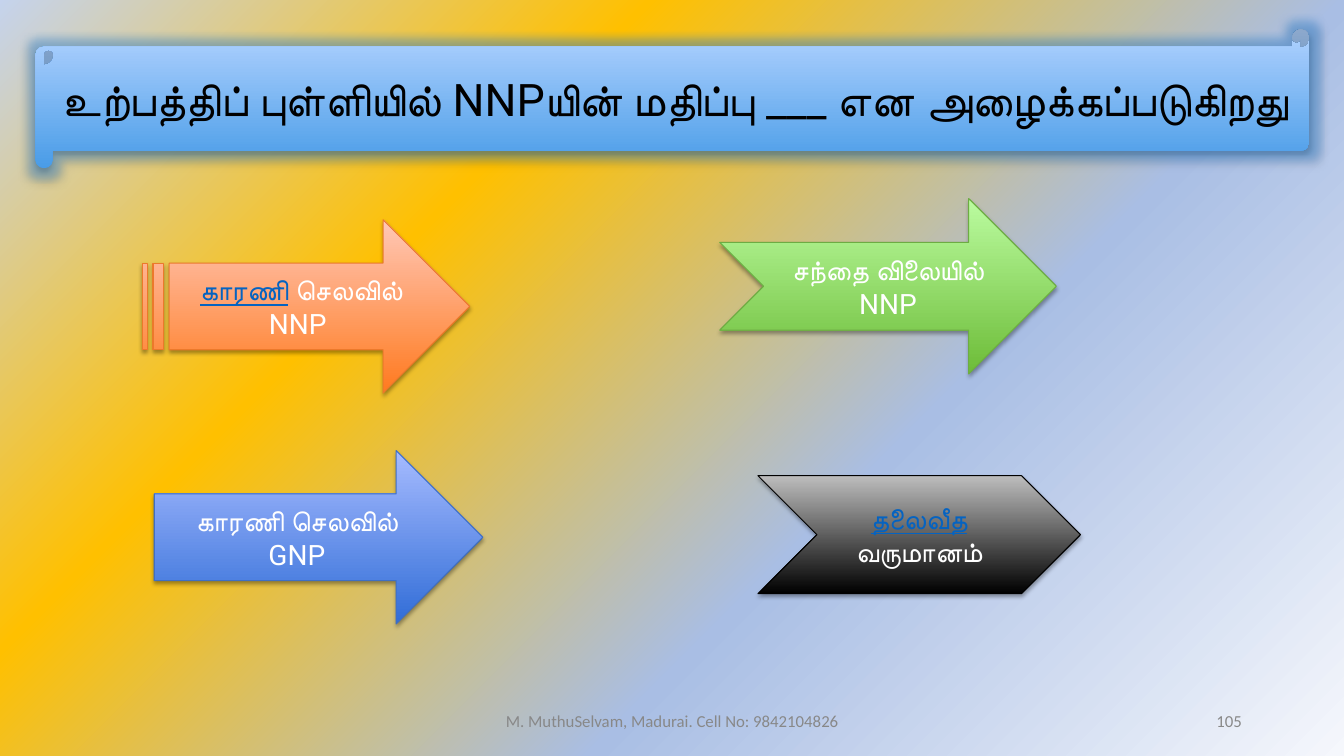
from dataclasses import dataclass

from lxml import etree
from pptx import Presentation, util as u
from pptx.dml.color import RGBColor
from pptx.enum import shapes, text
from pptx.oxml import ns, parse_xml

SHAPE, ALIGN = shapes.MSO_SHAPE, text.PP_ALIGN


@dataclass(frozen=True)
class Theme:
    heading_font: str = "Roboto"
    footer_font: str = "Calibri"
    question_size: int = 32
    answer_size: int = 20
    footer_size: int = 12
    black: str = "000000"
    white: str = "FFFFFF"
    keyword: str = "0563C1"
    grey: str = "888888"
    glow: str = "3A8EDB"
    backdrop: tuple = ((0, "F5F7FC"), (36, "A9BEE4"), (69, "FFC000"), (100, "C5D3ED"))


THEME = Theme()

# Boxes are left, top, width, height in percent of the slide.
# Text runs are (words, is_keyword); gradients run from bottom to top.
QUESTION = {
    "box": (2.63, 3.87, 94.8, 18.4), "preset": SHAPE.HORIZONTAL_SCROLL,
    "gradient": ("499CE7", "B0D2FF"), "outline": None,
    "runs": [("உற்பத்திப் புள்ளியில் NNPயின் மதிப்பு ___ என அழைக்கப்படுகிறது", False)],
}
ANSWERS = [
    {"box": (10.58, 29.07, 24.38, 22.93), "preset": SHAPE.STRIPED_RIGHT_ARROW,
     "gradient": ("FF7A1F", "FFC7B6"), "outline": "EC792B",
     "runs": [(" ", False), ("காரணி", True), (" செலவில் NNP", False)]},
    {"box": (53.55, 26.27, 25.05, 23.2), "preset": SHAPE.NOTCHED_RIGHT_ARROW,
     "gradient": ("6DBC38", "BBFCA0"), "outline": "6DAC43",
     "runs": [("சந்தை விலையில் NNP", False)]},
    {"box": (11.48, 59.6, 24.45, 22.93), "preset": SHAPE.RIGHT_ARROW,
     "gradient": ("316DD7", "A6BBFF"), "outline": "3F6FC3",
     "runs": [("காரணி செலவில் GNP", False)]},
    {"box": (56.4, 62.93, 24, 15.6), "preset": SHAPE.CHEVRON,
     "gradient": ("000000", "BDBDBD"), "outline": "000000",
     "runs": [("தலைவீத", True), (" வருமானம்", False)]},
]
FOOTERS = [
    ((33.15, 92.67, 33.75, 5.33), ALIGN.CENTER, "M. MuthuSelvam, Madurai. Cell No: 9842104826"),
    ((70.65, 92.67, 22.5, 5.33), ALIGN.RIGHT, "105"),
]

deck = Presentation()
deck.slide_width, deck.slide_height = u.Inches(13.333), u.Inches(7.5)
slide = deck.slides.add_slide(deck.slide_layouts[6])


def place(box):
    extents = (deck.slide_width, deck.slide_height) * 2
    return [round(share * extent / 100) for share, extent in zip(box, extents)]


def write(shape, runs, align, font, size, color):
    frame = shape.text_frame
    frame.word_wrap = True
    frame.vertical_anchor = text.MSO_ANCHOR.MIDDLE
    paragraph = frame.paragraphs[0]
    paragraph.alignment = align
    for words, is_keyword in runs:
        run = paragraph.add_run()
        run.text = words
        for name, value in {"name": font, "size": u.Pt(size), "underline": is_keyword}.items():
            setattr(run.font, name, value)
        run.font.color.rgb = RGBColor.from_string(THEME.keyword if is_keyword else color)


def add_effect(shape, tag, color, alpha, **lengths):
    effects = shape._element.spPr.find(ns.qn("a:effectLst"))
    effect = etree.SubElement(effects, ns.qn(tag), {k: str(v) for k, v in lengths.items()})
    tint = etree.SubElement(effect, ns.qn("a:srgbClr"), val=color)
    etree.SubElement(tint, ns.qn("a:alpha"), val=str(alpha * 1000))


def add_panel(panel, glow=False):
    shape = slide.shapes.add_shape(panel["preset"], *place(panel["box"]))
    shape.fill.gradient()
    shape.fill.gradient_angle = 90
    for stop, color in zip(shape.fill.gradient_stops, panel["gradient"]):
        stop.color.rgb = RGBColor.from_string(color)
        stop.position = panel["gradient"].index(color)
    if panel["outline"]:
        shape.line.color.rgb = RGBColor.from_string(panel["outline"])
        shape.line.width = u.Pt(0.75)
    else:
        shape.line.fill.background()
    shape.shadow.inherit = False
    if glow:
        add_effect(shape, "a:glow", THEME.glow, 40, rad=u.Pt(11))
    add_effect(shape, "a:outerShdw", THEME.black, 35, blurRad=u.Pt(3.1),
               dist=u.Pt(1.8), dir=90 * 60000, rotWithShape=0)
    return shape


def paint_background():
    """Radial gradient spreading from the bottom right corner."""
    slide.background.fill.gradient()
    plain = slide.element.find(".//" + ns.qn("a:gradFill"))
    stops = "".join(f'<a:gs pos="{at * 1000}"><a:srgbClr val="{color}"/></a:gs>'
                    for at, color in THEME.backdrop)
    radial = parse_xml(
        f'<a:gradFill {ns.nsdecls("a")} rotWithShape="1"><a:gsLst>{stops}</a:gsLst>'
        '<a:path path="circle"><a:fillToRect l="100000" t="100000"/></a:path></a:gradFill>')
    plain.getparent().replace(plain, radial)


paint_background()
question = add_panel(QUESTION, glow=True)
question.text_frame.margin_right = 0
write(question, QUESTION["runs"], ALIGN.LEFT, THEME.heading_font, THEME.question_size, THEME.black)

for box, align, words in FOOTERS:
    write(slide.shapes.add_textbox(*place(box)), [(words, False)], align,
          THEME.footer_font, THEME.footer_size, THEME.grey)

for answer in ANSWERS:
    write(add_panel(answer), answer["runs"], ALIGN.CENTER,
          THEME.heading_font, THEME.answer_size, THEME.white)

deck.save("out.pptx")
